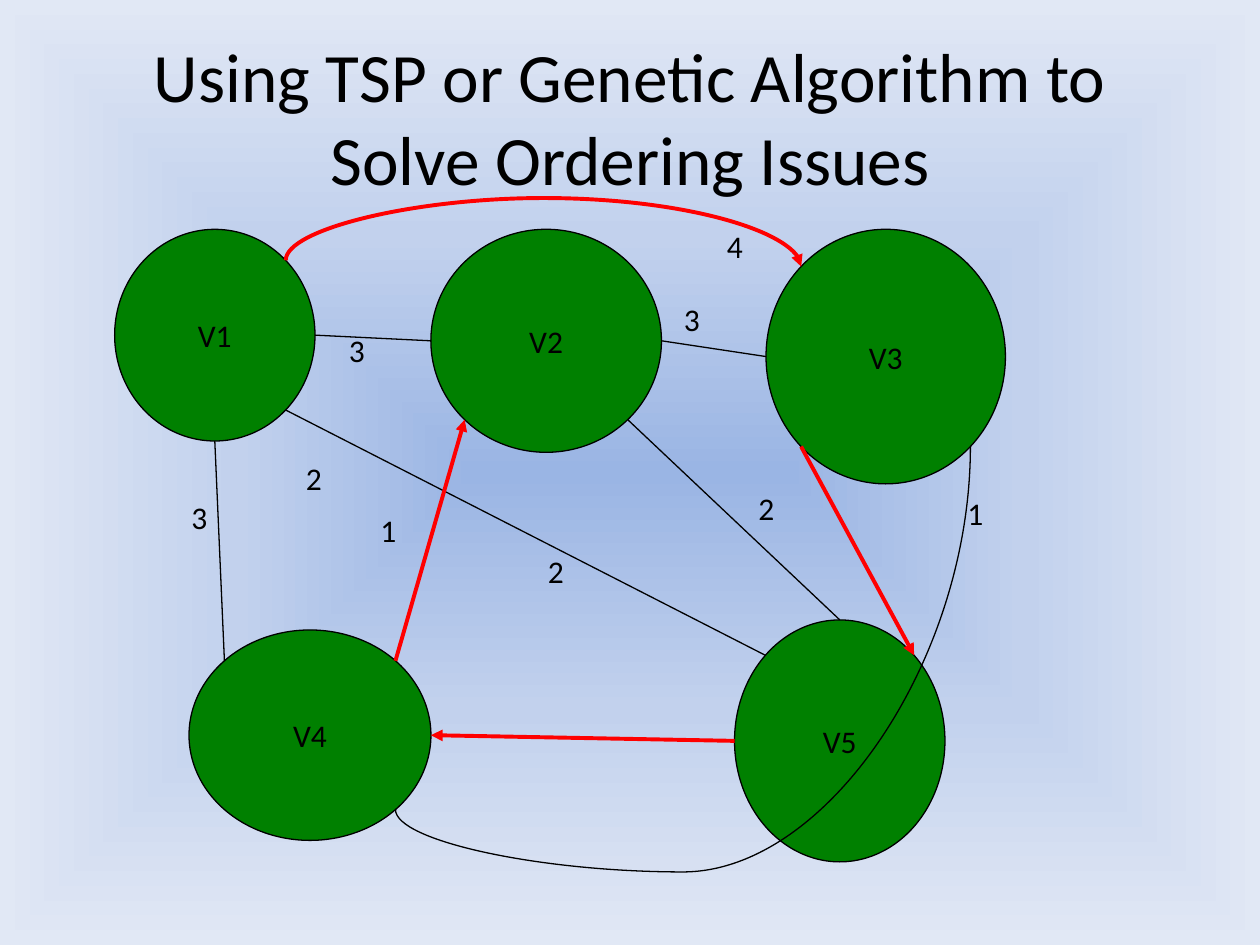
import math
import pptx
import pptx.util
import pptx.oxml
import pptx.oxml.ns
import pptx.dml.color
import pptx.enum.shapes
import pptx.enum.text
from lxml import etree

Inches = pptx.util.Inches
Pt = pptx.util.Pt
RGBColor = pptx.dml.color.RGBColor
Align = pptx.enum.text.PP_ALIGN
Anchor = pptx.enum.text.MSO_ANCHOR
Connector = pptx.enum.shapes.MSO_CONNECTOR
qn = pptx.oxml.ns.qn

BLACK = RGBColor(0x00, 0x00, 0x00)
GREEN = RGBColor(0x00, 0x80, 0x00)
RED = RGBColor(0xFF, 0x00, 0x00)
BACKGROUND_STOPS = [
    (0, RGBColor(0x9A, 0xB5, 0xE4)),
    (50, RGBColor(0xC2, 0xD1, 0xED)),
    (100, RGBColor(0xE1, 0xE8, 0xF5)),
]

NODES = {
    "V1": (0.01, 0.32, 1.59, 1.68),
    "V2": (2.52, 0.32, 1.83, 1.77),
    "V3": (5.18, 0.32, 1.9, 2.02),
    "V4": (0.6, 3.5, 1.92, 1.67),
    "V5": (4.93, 3.42, 1.67, 1.92),
}
SITE_ANGLES = {
    "right": 0, "bottom right": 45, "bottom": 90, "bottom left": 135,
    "left": 180, "top left": 225, "top": 270, "top right": 315,
}
PLAIN_EDGES = [
    ("V1", "right", "V2", "left"),
    ("V2", "right", "V3", "left"),
    ("V1", "bottom", "V4", "top left"),
    ("V1", "bottom right", "V5", "top left"),
    ("V2", "bottom right", "V5", "top"),
]
ROUTE_EDGES = [
    ("V4", "top right", "V2", "bottom left"),
    ("V3", "bottom left", "V5", "top right"),
    ("V5", "left", "V4", "right"),
]
WEIGHTS = [
    ("3", 1.77, 1.08, 0.58),
    ("4", 4.77, 0.25, 1.33),
    ("3", 0.52, 2.4, 1.17),
    ("2", 3.35, 2.83, 0.5),
    ("2", 1.43, 2.09, 0.75),
    ("3", 4.43, 0.83, 1.37),
    ("2", 5.02, 2.33, 1.65),
    ("1", 6.68, 2.37, 0.58),
    ("1", 2.02, 2.51, 0.42),
]


def paint_background(page):
    page.background.fill.solid()
    solid = page.element.xpath(".//p:bg//a:solidFill")[0]
    stops = "".join(
        f'<a:gs pos="{percent * 1000}"><a:srgbClr val="{color}"/></a:gs>'
        for percent, color in BACKGROUND_STOPS
    )
    gradient = pptx.oxml.parse_xml(
        '<a:gradFill xmlns:a="http://schemas.openxmlformats.org/drawingml/2006/main" '
        f'rotWithShape="1"><a:gsLst>{stops}</a:gsLst><a:path path="shape">'
        '<a:fillToRect l="50000" t="50000" r="50000" b="50000"/></a:path></a:gradFill>'
    )
    solid.getparent().replace(solid, gradient)


def write_text(shape, text, size, align, wrap=True):
    frame = shape.text_frame
    frame.word_wrap = wrap
    para = frame.paragraphs[0]
    para.alignment = align
    span = para.add_run()
    span.text = text
    span.font.name = "Calibri"
    span.font.size = Pt(size)
    span.font.color.rgb = BLACK


def add_title(page, left, top, width, height):
    box = page.shapes.add_textbox(left, top, width, height)
    write_text(box, "Using TSP or Genetic Algorithm to Solve Ordering Issues", 39.6, Align.CENTER)
    box.text_frame.vertical_anchor = Anchor.MIDDLE


def add_node(page, name, left, top, width, height):
    node = page.shapes.add_shape(
        pptx.enum.shapes.MSO_SHAPE.OVAL, left, top, width, height)
    node.shadow.inherit = False
    node.fill.solid()
    node.fill.fore_color.rgb = GREEN
    node.line.color.rgb = BLACK
    node.line.width = Pt(0.75)
    write_text(node, name, 18, Align.CENTER, wrap=False)
    node.text_frame.vertical_anchor = Anchor.MIDDLE
    return node


def find_site(node, site):
    angle = math.radians(SITE_ANGLES[site])
    x = node.left + node.width / 2 * (1 + math.cos(angle))
    y = node.top + node.height / 2 * (1 + math.sin(angle))
    return round(x), round(y)


def add_edge(page, start, end, on_route, kind=Connector.STRAIGHT):
    edge = page.shapes.add_connector(kind, *start, *end)
    edge.line.color.rgb = RED if on_route else BLACK
    edge.line.width = Pt(2.25 if on_route else 0.75)
    properties = edge.element.spPr
    if on_route:
        etree.SubElement(properties.find(qn("a:ln")), qn("a:tailEnd"), type="triangle")
    etree.SubElement(properties, qn("a:effectLst"))
    return edge


def add_curved_edge(page, start, end, bend_y, on_route):
    edge = add_edge(page, start, end, on_route, Connector.CURVE)
    (start_x, start_y), (end_x, end_y) = start, end
    width, height = end_y - start_y, abs(end_x - start_x)
    edge.left = round((start_x + end_x - width) / 2)
    edge.top = round((start_y + end_y - height) / 2)
    edge.width, edge.height = width, height
    rightward = end_x > start_x
    frame = edge.element.spPr.find(qn("a:xfrm"))
    frame.set("rot", str((270 if rightward else 90) * 60000))
    frame.set("flipH", "1" if rightward else "0")
    guides = edge.element.spPr.find(qn("a:prstGeom")).find(qn("a:avLst"))
    ratio = round((bend_y - start_y) / width * 100000)
    etree.SubElement(guides, qn("a:gd"), name="adj1", fmla=f"val {ratio}")


def add_graph(page, left, top):
    nodes = {
        name: add_node(page, name, left + Inches(x), top + Inches(y), Inches(width), Inches(height))
        for name, (x, y, width, height) in NODES.items()
    }
    for edges, on_route in ((PLAIN_EDGES, False), (ROUTE_EDGES, True)):
        for source, source_site, target, target_site in edges:
            add_edge(page, find_site(nodes[source], source_site),
                     find_site(nodes[target], target_site), on_route)
    add_curved_edge(page, find_site(nodes["V1"], "top right"),
                    find_site(nodes["V3"], "top left"), top + Inches(0.07), True)
    add_curved_edge(page, find_site(nodes["V3"], "bottom right"),
                    find_site(nodes["V4"], "bottom right"), top + Inches(5.42), False)
    for weight, x, y, width in WEIGHTS:
        box = page.shapes.add_textbox(left + Inches(x), top + Inches(y), Inches(width), Inches(0.4))
        write_text(box, weight, 18, Align.LEFT)


def main():
    deck = pptx.Presentation()
    deck.slide_width = Inches(10)
    deck.slide_height = Inches(7.5)
    page = deck.slides.add_slide(deck.slide_layouts[6])
    paint_background(page)
    add_title(page, Inches(0.5), Inches(0.3), Inches(9), Inches(1.25))
    add_graph(page, Inches(0.9), Inches(1.5))
    deck.save("out.pptx")


if __name__ == "__main__":
    main()
